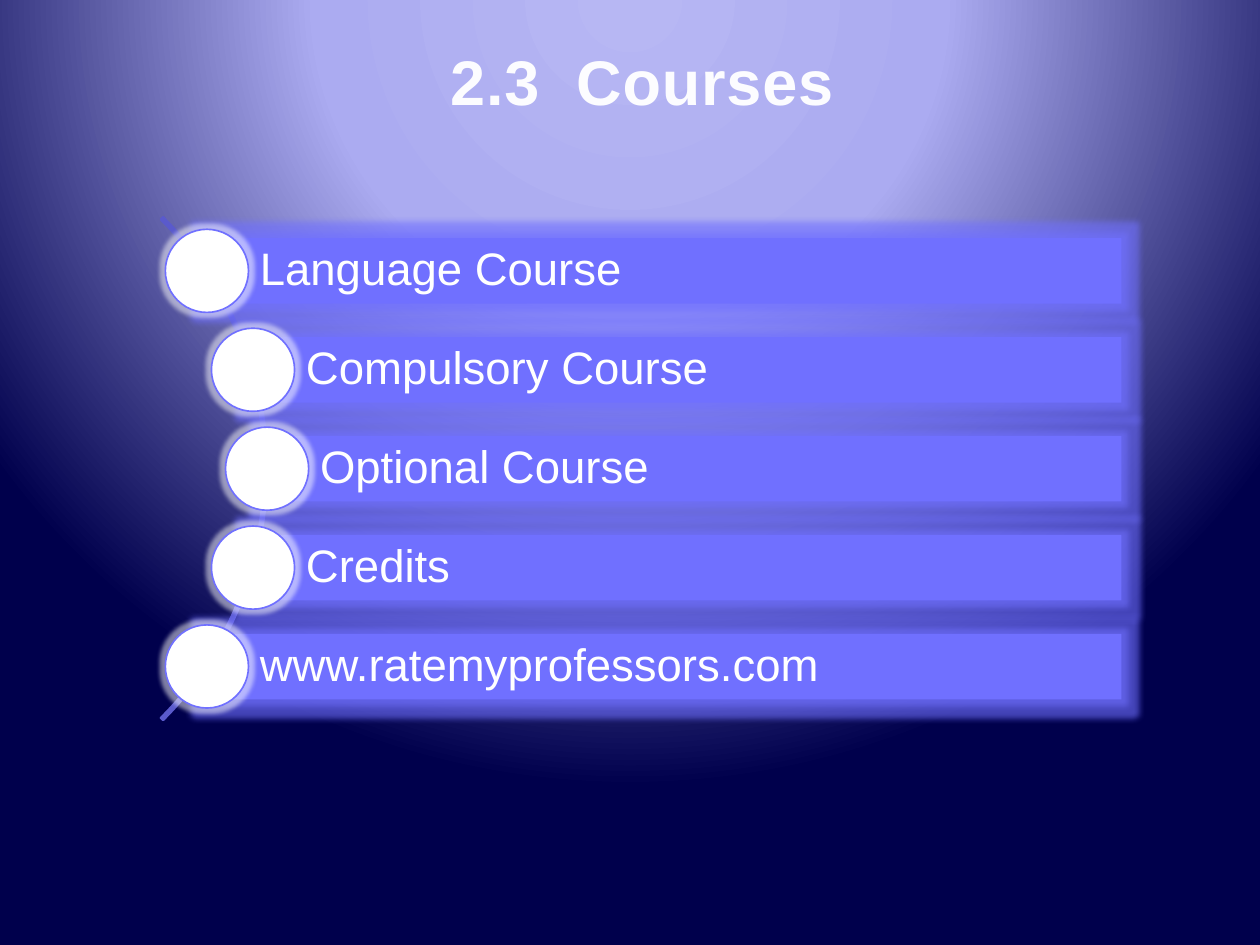
import math
from dataclasses import dataclass

from pptx import Presentation, oxml
from pptx import util as u
from pptx.dml.color import RGBColor
from pptx.enum import shapes, text
from pptx.oxml import ns


@dataclass(frozen=True)
class Theme:
    font: str = "Arial"
    title_size: int = 36
    item_size: int = 26
    title: str = "FCFCFF"
    white: str = "FFFFFF"
    bar: str = "7070FF"
    arc: str = "5A5ACC"
    background: tuple = ((0, "B7B7F3"), (40, "ABABF1"), (100, "00004C"))


theme = Theme()


def write_text(shape, content, size, color, bold=False, align=text.PP_ALIGN.LEFT,
               anchor=text.MSO_ANCHOR.MIDDLE, line_spacing=1.0):
    frame = shape.text_frame
    frame.word_wrap = True
    frame.auto_size = text.MSO_AUTO_SIZE.NONE
    frame.vertical_anchor = anchor
    paragraph = frame.paragraphs[0]
    paragraph.alignment = align
    paragraph.line_spacing = line_spacing
    run = paragraph.add_run()
    run.text = content
    run.font.name = theme.font
    run.font.size = u.Pt(size)
    run.font.bold = bold
    run.font.color.rgb = RGBColor.from_string(color)
    return run


def add_glow(shape, color, radius, opacity):
    shape.shadow.inherit = False
    effects = shape._element.spPr.find(ns.qn("a:effectLst"))
    effects.append(oxml.parse_xml(
        f'<a:glow {ns.nsdecls("a")} rad="{u.Inches(radius)}"><a:srgbClr val="{color}">'
        f'<a:alpha val="{opacity * 1000}"/></a:srgbClr></a:glow>'))


presentation = Presentation()
presentation.slide_width = u.Inches(10)
presentation.slide_height = u.Inches(7.5)
slide = presentation.slides.add_slide(presentation.slide_layouts[5])

# Background: circular gradient centred above the slide
slide.background.fill.solid()
solid = slide._element.cSld.find(".//" + ns.qn("a:solidFill"))
stops = "".join(f'<a:gs pos="{position * 1000}"><a:srgbClr val="{color}"/></a:gs>'
                for position, color in theme.background)
solid.getparent().replace(solid, oxml.parse_xml(
    f'<a:gradFill {ns.nsdecls("a")} rotWithShape="1"><a:gsLst>{stops}</a:gsLst>'
    '<a:path path="circle"><a:fillToRect l="50000" t="-80000" r="50000" b="180000"/>'
    '</a:path></a:gradFill>'))

# Title
title = slide.shapes.title
title.left, title.top = u.Inches(0.43), u.Inches(0.29)
title.width, title.height = u.Inches(9.33), u.Inches(0.96)
run = write_text(title, "2.3\tCourses", theme.title_size, theme.title, bold=True,
                 align=text.PP_ALIGN.CENTER, anchor=text.MSO_ANCHOR.TOP)
run.font._element.set("spc", "50")

# Arc behind the list
center_x, center_y, radius = -0.7, 3.72, 2.82
arc = slide.shapes.add_shape(
    shapes.MSO_SHAPE.BLOCK_ARC, u.Inches(center_x - radius), u.Inches(center_y - radius),
    u.Inches(2 * radius), u.Inches(2 * radius))
for index, value in enumerate((189, 27, 0.004)):
    arc.adjustments[index] = value
arc.fill.background()
arc.line.color.rgb = RGBColor.from_string(theme.arc)
arc.line.width = u.Pt(1.5)
arc.shadow.inherit = False

# Bars and circles, with each circle centred on the arc
items = ["Language Course", "Compulsory Course", "Optional Course", "Credits",
         "www.ratemyprofessors.com"]
pitch, bar_height, bar_right, diameter = 0.785, 0.52, 8.9, 0.66
for index, item in enumerate(items):
    offset = (index - (len(items) - 1) / 2) * pitch
    x = center_x + math.sqrt(radius ** 2 - offset ** 2)
    y = center_y + offset

    bar = slide.shapes.add_shape(
        shapes.MSO_SHAPE.RECTANGLE, u.Inches(x), u.Inches(y - bar_height / 2),
        u.Inches(bar_right - x), u.Inches(bar_height))
    bar.fill.solid()
    bar.fill.fore_color.rgb = RGBColor.from_string(theme.bar)
    bar.line.fill.background()
    add_glow(bar, theme.bar, 0.1, 60)
    frame = bar.text_frame
    frame.margin_left = u.Inches(0.42)
    frame.margin_top = frame.margin_right = frame.margin_bottom = u.Inches(0.07)
    write_text(bar, item, theme.item_size, theme.white, line_spacing=0.9)

    circle = slide.shapes.add_shape(
        shapes.MSO_SHAPE.OVAL, u.Inches(x - diameter / 2), u.Inches(y - diameter / 2),
        u.Inches(diameter), u.Inches(diameter))
    circle.fill.solid()
    circle.fill.fore_color.rgb = RGBColor.from_string(theme.white)
    circle.line.color.rgb = RGBColor.from_string(theme.bar)
    circle.line.width = u.Pt(0.94)
    add_glow(circle, theme.white, 0.07, 50)

presentation.save("out.pptx")
